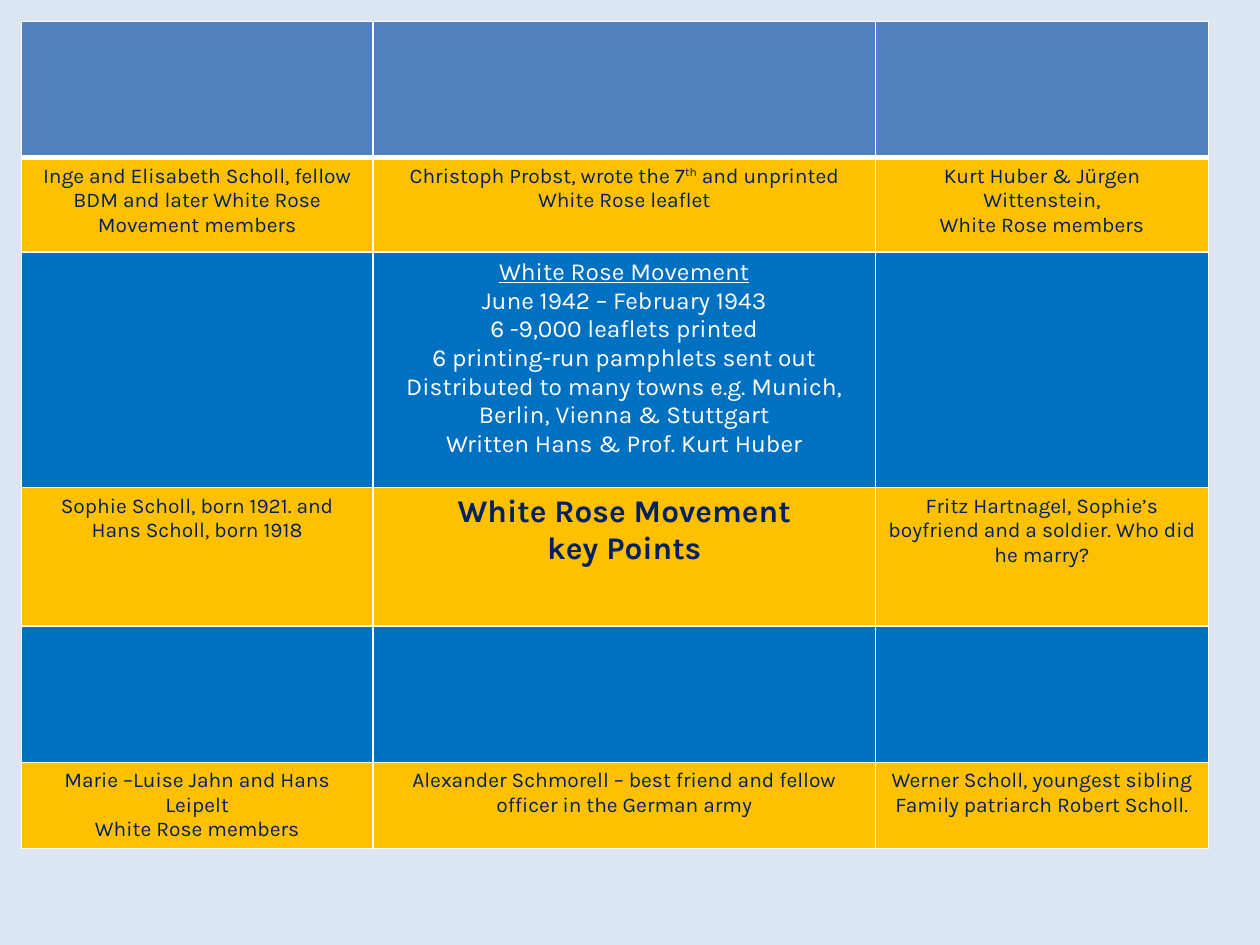
from dataclasses import dataclass

from lxml.etree import SubElement
from pptx import Presentation
from pptx.dml.color import RGBColor
from pptx.enum.text import PP_ALIGN as Align
from pptx.oxml.ns import qn
from pptx.util import Inches, Pt

FONT = "Karla"
WHITE, NAVY = "FFFFFF", "002060"
STEEL, GOLD, BLUE = "4F81BD", "FFC000", "0070C0"
COLUMN_WIDTHS = [2.79, 3.99, 2.64]


@dataclass
class Entry:
    lines: tuple[str, ...] = ()
    size: int = 12
    color: str = NAVY
    bold: bool = False
    underlined_heading: bool = False


@dataclass
class Band:
    height: float
    fill: str
    entries: tuple[Entry, Entry, Entry] = (Entry(), Entry(), Entry())
    bottom_border: float = 1


def caption(*lines: str) -> Entry:
    return Entry(lines)


# Table content; text between carets is superscript
BANDS = [
    Band(1.08, STEEL, bottom_border=3),
    Band(0.75, GOLD, (
        caption("Inge and Elisabeth Scholl, fellow BDM and later White Rose Movement members"),
        caption("Christoph Probst, wrote the 7^th^ and unprinted White Rose leaflet"),
        caption("Kurt Huber & Jürgen Wittenstein,", "White Rose members"),
    )),
    Band(1.87, BLUE, (
        Entry(),
        Entry((
            "White Rose Movement",
            "June 1942 – February 1943",
            "6 -9,000 leaflets printed",
            "6 printing-run pamphlets sent out",
            "Distributed to many towns e.g. Munich, Berlin, Vienna & Stuttgart",
            "Written Hans & Prof. Kurt Huber",
        ), size=14, color=WHITE, underlined_heading=True),
        Entry(),
    )),
    Band(1.1, GOLD, (
        caption("Sophie Scholl, born 1921. and", "Hans Scholl, born 1918"),
        Entry(("White Rose Movement", "key Points"), size=18, bold=True),
        caption("Fritz Hartnagel, Sophie’s boyfriend and a soldier. Who did he marry?"),
    )),
    Band(1.08, BLUE),
    Band(0.54, GOLD, (
        caption("Marie –Luise Jahn and Hans Leipelt", "White Rose members"),
        caption("Alexander Schmorell – best friend and fellow officer in the German army"),
        caption("Werner Scholl, youngest sibling", "Family patriarch Robert Scholl."),
    )),
]


def rgb(color: str) -> RGBColor:
    return RGBColor.from_string(color)


def set_borders(cell, bottom: float) -> None:
    properties = cell._tc.get_or_add_tcPr()
    for side, width in (("L", 1), ("R", 1), ("T", 1), ("B", bottom)):
        line = SubElement(properties, qn(f"a:ln{side}"), w=str(Pt(width)))
        solid = SubElement(line, qn("a:solidFill"))
        SubElement(solid, qn("a:srgbClr"), val=WHITE)


def write_entry(cell, entry: Entry) -> None:
    frame = cell.text_frame
    for index, line in enumerate(entry.lines):
        paragraph = frame.add_paragraph() if index else frame.paragraphs[0]
        paragraph.alignment = Align.CENTER
        for part, text in enumerate(line.split("^")):
            run = paragraph.add_run()
            run.text = text
            if part % 2:
                run._r.get_or_add_rPr().set("baseline", "30000")
        font = paragraph.font
        font.name, font.size, font.bold = FONT, Pt(entry.size), entry.bold
        font.color.rgb = rgb(entry.color)
        font.underline = entry.underlined_heading and index == 0


def draw_table(slide, bands: list[Band]) -> None:
    table = slide.shapes.add_table(
        len(bands), len(COLUMN_WIDTHS), Inches(0.17), Inches(0.17),
        Inches(sum(COLUMN_WIDTHS)), Inches(sum(band.height for band in bands)),
    ).table
    table.first_row = table.horz_banding = False
    for column, width in zip(table.columns, COLUMN_WIDTHS):
        column.width = Inches(width)
    for row, band in zip(table.rows, bands):
        row.height = Inches(band.height)
        for cell, entry in zip(row.cells, band.entries):
            set_borders(cell, band.bottom_border)
            cell.fill.solid()
            cell.fill.fore_color.rgb = rgb(band.fill)
            write_entry(cell, entry)


def main() -> None:
    deck = Presentation()
    deck.slide_width, deck.slide_height = Inches(10), Inches(7.5)
    slide = deck.slides.add_slide(deck.slide_layouts[6])

    # Background
    background = slide.background.fill
    background.solid()
    background.fore_color.rgb = rgb("DCE6F2")

    # Key points table
    draw_table(slide, BANDS)
    deck.save("out.pptx")


if __name__ == "__main__":
    main()
